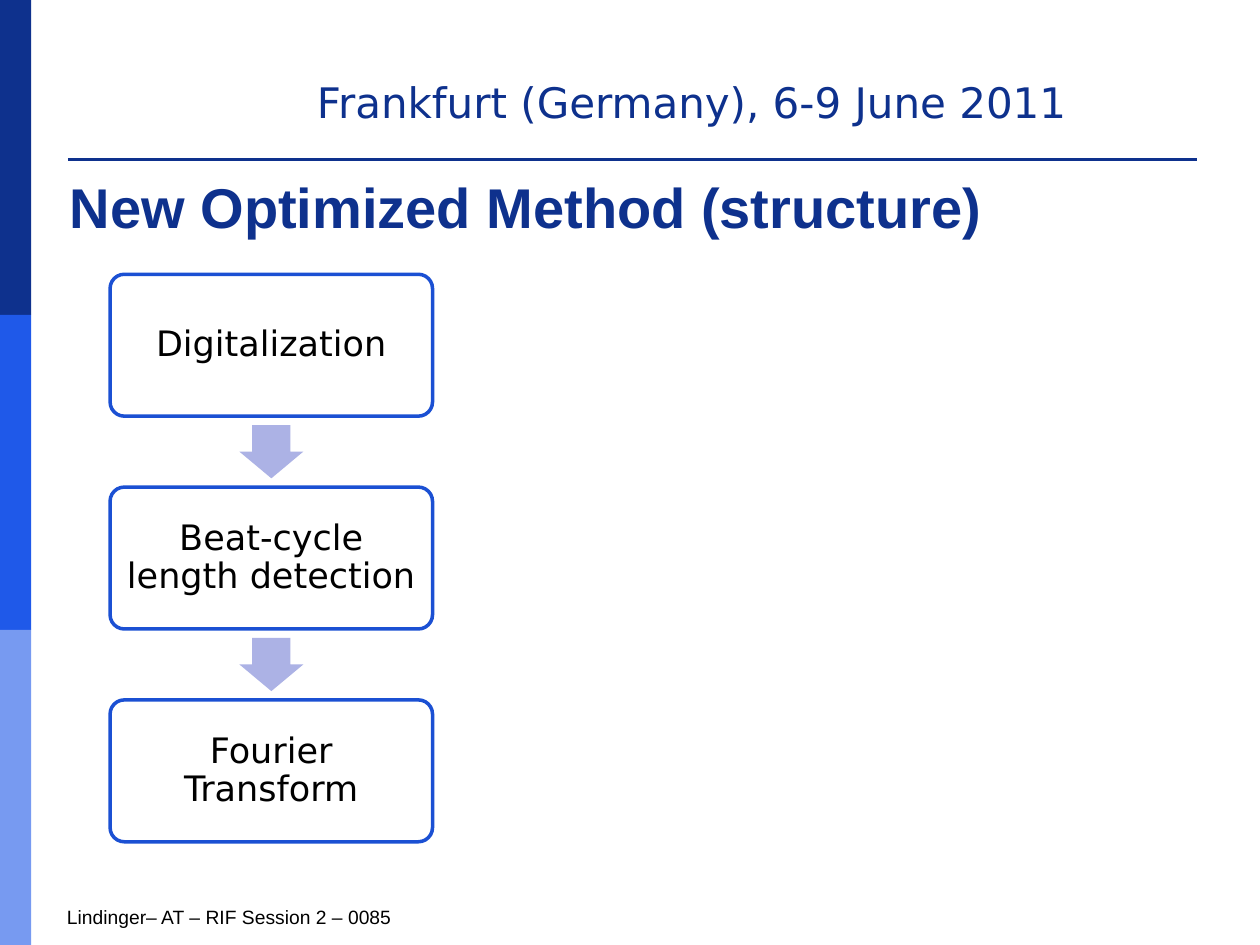
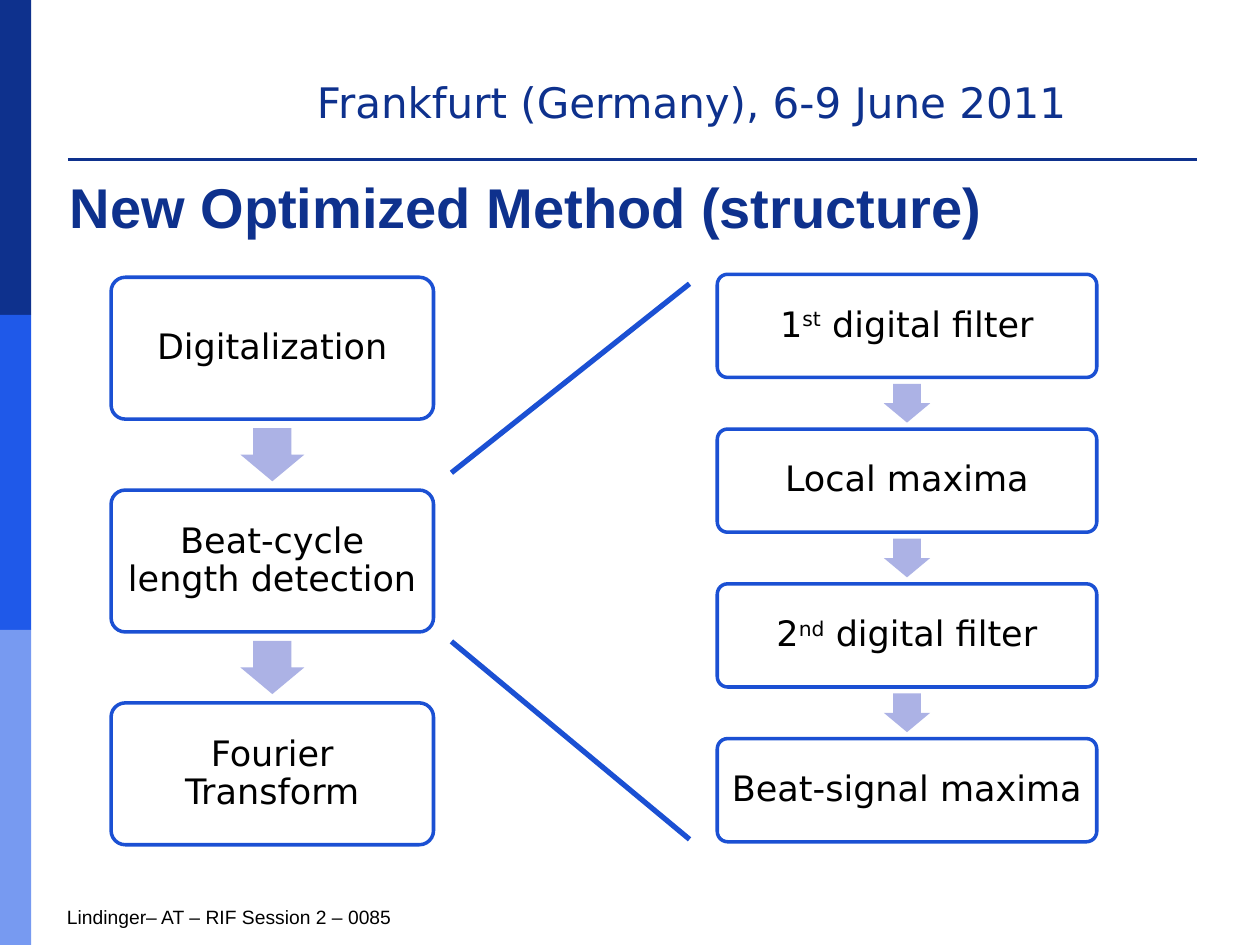
from dataclasses import dataclass

from lxml.etree import SubElement
from pptx import Presentation
from pptx.dml.color import RGBColor
from pptx.enum.shapes import MSO_CONNECTOR, MSO_SHAPE
from pptx.enum.text import MSO_ANCHOR, PP_ALIGN
from pptx.oxml.ns import qn
from pptx.util import Cm, Pt


@dataclass(frozen=True)
class Theme:
    navy: str = "0E318D"
    bands: tuple = ("0E318D", "1F59E9", "779AF1")
    edge: str = "1B50D3"
    arrow: str = "ACB2E5"
    paper: str = "FFFFFF"
    ink: str = "000000"
    head: str = "Arial"
    body: str = "DejaVu Sans"
    title: int = 32
    event: int = 24
    step: int = 20
    foot: int = 11
    rule: int = 6


THEME = Theme()
WIDTH, HEIGHT = 25.4, 19.05
STAGES = ["Digitalization", "Beat-cycle length detection", "Fourier Transform"]
FILTERS = ["1|st| digital filter", "Local maxima",
           "2|nd| digital filter", "Beat-signal maxima"]


def style(font, name, size, color, bold=False):
    font.name = name
    font.size = Pt(size)
    font.bold = bold
    font.color.rgb = RGBColor.from_string(color)


def add_block(slide, kind, left, top, width, height, fill, edge=None):
    block = slide.shapes.add_shape(kind, Cm(left), Cm(top), Cm(width), Cm(height))
    block.shadow.inherit = False
    block.fill.solid()
    block.fill.fore_color.rgb = RGBColor.from_string(fill)
    if edge:
        block.line.color.rgb = RGBColor.from_string(edge)
        block.line.width = Pt(2)
    else:
        block.line.fill.background()
    return block


def add_line(slide, start, end, color, weight):
    line = slide.shapes.add_connector(
        MSO_CONNECTOR.STRAIGHT, *(Cm(value) for value in start + end))
    line.line.color.rgb = RGBColor.from_string(color)
    line.line.width = Pt(weight)
    SubElement(line._element.spPr, qn("a:effectLst"))


def add_rule(slide, left, top, width, height, color, weight):
    table = slide.shapes.add_table(
        1, 1, Cm(left), Cm(top), Cm(width), Cm(height)).table
    table.first_row = table.horz_banding = False
    cell = table.cell(0, 0)
    cell.margin_left = cell.margin_right = 0
    cell.margin_top = cell.margin_bottom = 0
    para = cell.text_frame.paragraphs[0]
    SubElement(para._p, qn("a:endParaRPr"), sz=str(THEME.rule * 100))
    props = cell._tc.get_or_add_tcPr()
    for side in ("L", "R", "T"):
        SubElement(SubElement(props, qn(f"a:ln{side}")), qn("a:noFill"))
    base = SubElement(props, qn("a:lnB"), w=str(Pt(weight)))
    SubElement(SubElement(base, qn("a:solidFill")), qn("a:srgbClr"), val=color)
    cell.fill.background()


def add_label(slide, text, left, top, width, height, *look, wrap=True):
    frame = slide.shapes.add_textbox(
        Cm(left), Cm(top), Cm(width), Cm(height)).text_frame
    frame.word_wrap = wrap
    frame.vertical_anchor = MSO_ANCHOR.MIDDLE
    frame.text = text
    style(frame.paragraphs[0].runs[0].font, *look)


def add_step(slide, text, left, top, width, height):
    box = add_block(slide, MSO_SHAPE.ROUNDED_RECTANGLE, left, top, width, height,
                    THEME.paper, THEME.edge)
    box.adjustments[0] = 0.1
    frame = box.text_frame
    frame.word_wrap = True
    frame.vertical_anchor = MSO_ANCHOR.MIDDLE
    frame.margin_left = frame.margin_right = Cm(0.2)
    frame.margin_top = frame.margin_bottom = Cm(0.2)
    para = frame.paragraphs[0]
    para.alignment = PP_ALIGN.CENTER
    para.line_spacing = 0.9
    for index, part in enumerate(text.split("|")):
        run = para.add_run()
        run.text = part
        style(run.font, THEME.body, THEME.step, THEME.ink)
        if index % 2:
            run.font._element.set("baseline", "30000")


def add_flow(slide, steps, left, top, width, height):
    gap = height / 2
    wide, tall = height * 0.45, height * 0.375
    for index, text in enumerate(steps):
        y = top + index * (height + gap)
        if index:
            arrow = add_block(slide, MSO_SHAPE.DOWN_ARROW,
                              left + (width - wide) / 2, y - (gap + tall) / 2,
                              wide, tall, THEME.arrow)
            arrow.adjustments[0] = 0.6
            arrow.adjustments[1] = 0.5
        add_step(slide, text, left, y, width, height)


def add_page(deck, title):
    slide = deck.slides.add_slide(deck.slide_layouts[6])
    band = HEIGHT / len(THEME.bands)
    for index, color in enumerate(THEME.bands):
        add_block(slide, MSO_SHAPE.RECTANGLE, 0, index * band, 0.63, band, color)
    add_rule(slide, 1.37, 2.72, 22.77, 0.5, THEME.navy, 2.25)
    add_label(slide, "Frankfurt (Germany), 6-9 June 2011", 6.14, 1.42, 16.71, 1.27,
              THEME.body, THEME.event, THEME.navy)
    add_label(slide, "Lindinger– AT – RIF Session 2 – 0085", 1.1, 18.12, 7.16, 0.74,
              THEME.head, THEME.foot, THEME.ink, wrap=False)
    add_label(slide, title, 1.16, 3.33, 22.86, 1.65,
              THEME.head, THEME.title, THEME.navy, True)
    return slide


def main():
    deck = Presentation()
    deck.slide_width, deck.slide_height = Cm(WIDTH), Cm(HEIGHT)
    title = "New Optimized Method (structure)"

    slide = add_page(deck, title)
    add_flow(slide, STAGES, 2.22, 5.53, 6.5, 2.86)

    slide = add_page(deck, title)
    add_flow(slide, STAGES, 2.24, 5.59, 6.5, 2.86)
    add_flow(slide, FILTERS, 14.46, 5.53, 7.65, 2.08)
    add_line(slide, (9.1, 9.53), (13.9, 5.72), THEME.edge, 3)
    add_line(slide, (9.1, 12.93), (13.9, 16.92), THEME.edge, 3)

    deck.save("out.pptx")


if __name__ == "__main__":
    main()
